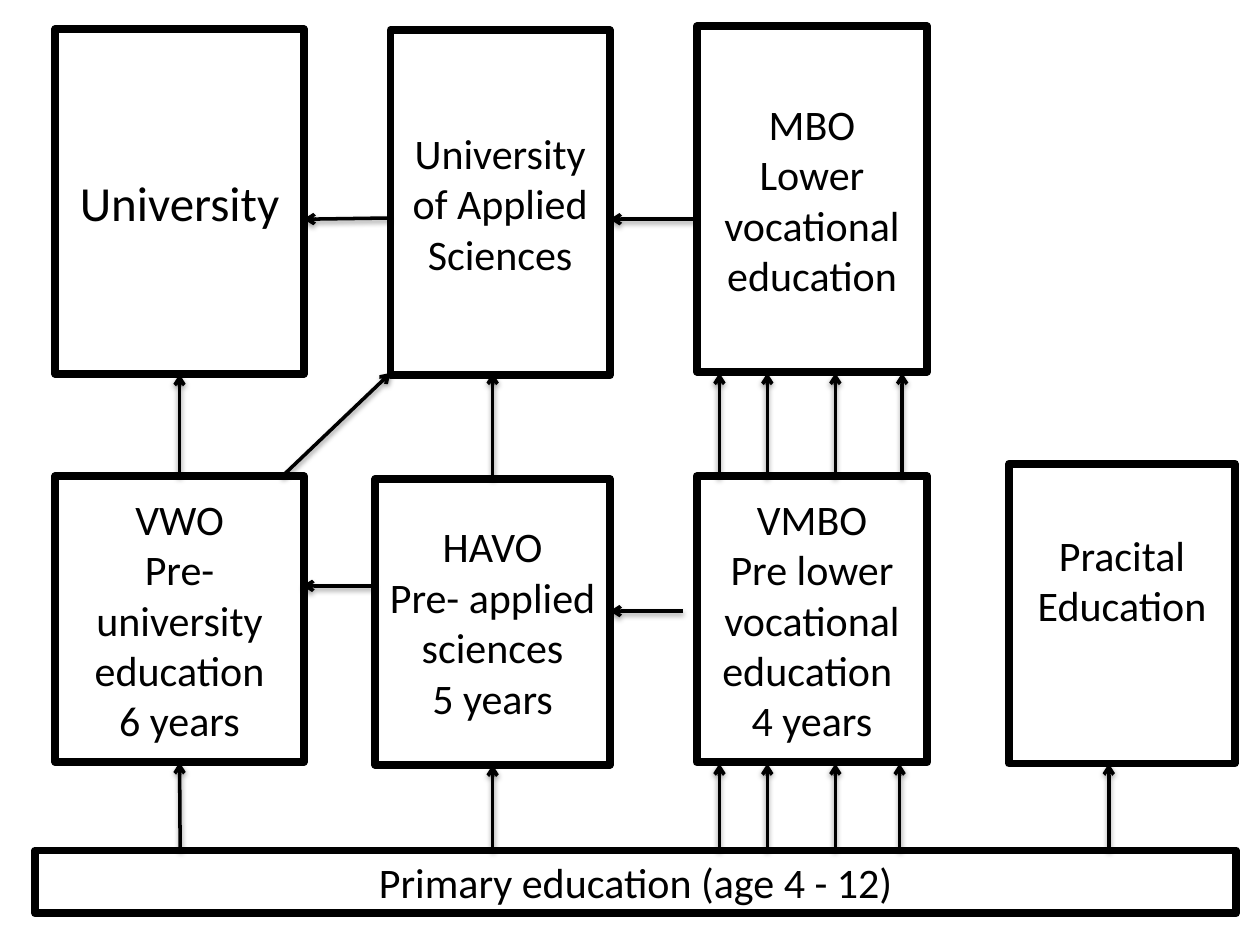
from dataclasses import dataclass

from lxml.etree import SubElement as Sub
from pptx import Presentation
from pptx.dml.color import RGBColor as Rgb
from pptx.enum.shapes import MSO_CONNECTOR as Conn, MSO_SHAPE as Shape
from pptx.enum.text import MSO_ANCHOR as Anchor, PP_ALIGN as Align
from pptx.oxml.ns import qn
from pptx.util import Inches, Pt


@dataclass(frozen=True)
class Theme:
    ink: Rgb = Rgb(0, 0, 0)
    paper: Rgb = Rgb(255, 255, 255)
    font: str = "Calibri"
    body: Pt = Pt(24)
    large: Pt = Pt(28)
    frame: Pt = Pt(4.5)
    arrow: Pt = Pt(2)


T = Theme()
TOP, LEFT, BASE, RIGHT = range(4)


def apply(item, form):
    for key, value in form.items():
        setattr(item, key, value)


def block(slide, box, lines, size=T.body, anchor=Anchor.MIDDLE, lift=0.05):
    rect = slide.shapes.add_shape(Shape.RECTANGLE, *map(Inches, box))
    rect.shadow.inherit = False
    rect.fill.solid()
    rect.fill.fore_color.rgb = T.paper
    rect.line.color.rgb = T.ink
    rect.line.width = T.frame
    frame = rect.text_frame
    apply(frame, {"word_wrap": True, "vertical_anchor": anchor,
                  "margin_bottom": Inches(lift)})
    frame.text = "\n".join(lines)
    for para in frame.paragraphs:
        para.alignment = Align.CENTER
        apply(para.font, {"name": T.font, "size": size})
        para.font.color.rgb = T.ink
    return rect


def arrow(slide, start, end, tail=None, head=None):
    line = slide.shapes.add_connector(Conn.STRAIGHT, *map(Inches, start + end))
    if tail:
        line.begin_connect(*tail)
    if head:
        line.end_connect(*head)
    line.line.color.rgb = T.ink
    line.line.width = T.arrow
    Sub(line.line._get_or_add_ln(), qn("a:tailEnd"), type="arrow")
    props = line._element.spPr
    cast = Sub(Sub(props, qn("a:effectLst")), qn("a:outerShdw"),
               blurRad=str(Pt(3.1)), dist=str(Pt(1.6)), dir="5400000",
               rotWithShape="0")
    tint = Sub(cast, qn("a:srgbClr"), val=str(T.ink))
    Sub(tint, qn("a:alpha"), val="38000")


def primary(slide, box):
    block(slide, box, ["Primary education (age 4 - 12)"], anchor=Anchor.TOP)


def schools(slide, box):
    x, y, wide, high = box
    vwo = block(slide, (x, y, 1.97, high),
                ["VWO", "Pre-university education", "6 years"])
    havo = block(slide, (x + 2.54, y + 0.02, 1.86, high),
                 ["HAVO", "Pre- applied sciences", "5 years"])
    block(slide, (x + 5.09, y, 1.83, high),
          ["VMBO", "Pre lower vocational education ", "4 years"])
    block(slide, (x + wide - 1.79, y - 0.1, 1.79, high + 0.11),
          ["Pracital Education"], lift=0.59)
    arrow(slide, (x + 2.54, y + 0.87), (x + 1.96, y + 0.87))
    arrow(slide, (x + 4.98, y + 1.07), (x + 4.4, y + 1.07))
    return vwo, havo


def higher(slide, box):
    x, y, wide, high = box
    uni = block(slide, (x, y + 0.02, 1.97, high), ["University"], T.large)
    block(slide, (x + 2.66, y + 0.03, 1.74, high),
          ["University of Applied Sciences"])
    block(slide, (x + wide - 1.83, y, 1.83, high),
          ["MBO", "Lower vocational education"])
    arrow(slide, (x + 5.09, y + 1.53), (x + 4.4, y + 1.53))
    arrow(slide, (x + 2.66, y + 1.52), (x + 1.97, y + 1.53))
    return uni


def climb(slide, box, lanes):
    x, y, wide, high = box
    for lane, tail, head in lanes:
        arrow(slide, (x + lane, y + high), (x + lane, y), tail, head)


def main():
    deck = Presentation()
    apply(deck, {"slide_width": Inches(10), "slide_height": Inches(7.5)})
    slide = deck.slides.add_slide(deck.slide_layouts[6])
    primary(slide, (0.28, 6.75, 9.53, 0.5))
    vwo, havo = schools(slide, (0.44, 3.78, 9.36, 2.27))
    uni = higher(slide, (0.44, 0.21, 6.92, 2.74))
    trade = [(lane, None, None) for lane in (5.71, 6.09, 6.63)]
    climb(slide, (0, 2.96, 10, 0.83),
          [(1.43, (vwo, TOP), (uni, BASE)), (3.91, (havo, TOP), None),
           *trade, (7.16, None, None)])
    climb(slide, (0, 6.06, 10, 0.69),
          [(1.43, None, (vwo, BASE)), (3.91, None, (havo, BASE)),
           *trade, (7.14, None, None), (8.8, None, None)])
    arrow(slide, (2.24, 3.78), (3.1, 2.96))
    deck.save("out.pptx")


if __name__ == "__main__":
    main()
